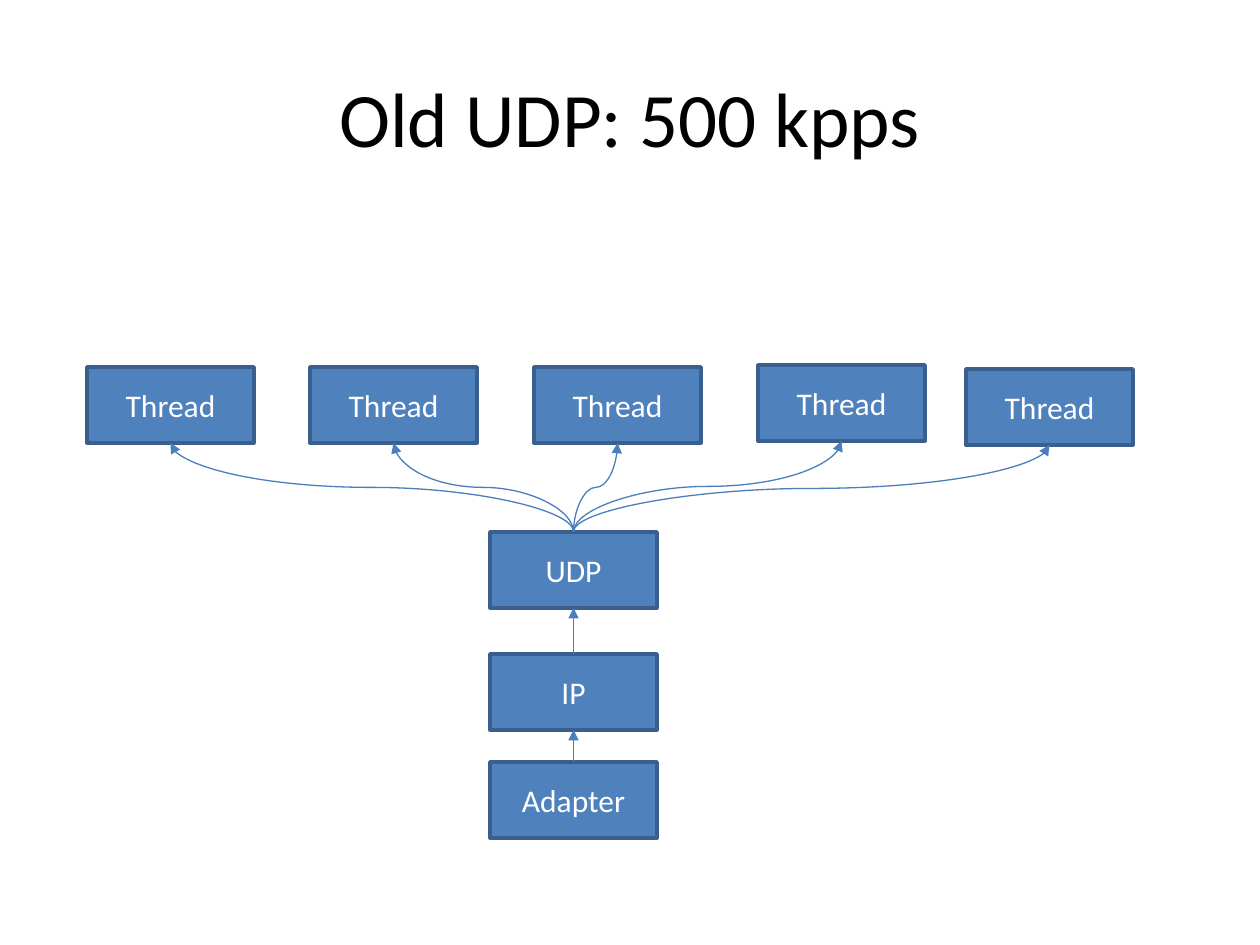
from lxml import etree
from pptx import Presentation
from pptx import util as u
from pptx.dml.color import RGBColor
from pptx.enum import shapes, text
from pptx.oxml.ns import qn

PX_PER_INCH = 126
FONT = "Calibri"
COLORS = {"title": "000000", "box": "4F81BD", "border": "3A5F8C",
          "label": "FFFFFF", "arrow": "4B7EBC"}
BOX_SIZE = (167, 76)
STACK_LEFT = 490
LAYERS = [("Adapter", 762), ("IP", 654), ("UDP", 532)]
THREADS = [(87, 367), (310, 367), (534, 367), (758, 365), (966, 369)]
TOP_SITE, BOTTOM_SITE = 0, 2


def px(count):
    """Turn whole px into EMU."""
    return u.Emu(round(count * u.Inches(1) / PX_PER_INCH))


def color(name):
    """Look up a palette colour."""
    return RGBColor.from_string(COLORS[name])


def write(frame, wording, size, tint):
    """Fill a text frame with one centred, formatted paragraph."""
    frame.text = wording
    frame.word_wrap = True
    frame.vertical_anchor = text.MSO_ANCHOR.MIDDLE
    line = frame.paragraphs[0]
    line.alignment = text.PP_ALIGN.CENTER
    font = line.runs[0].font
    font.name, font.size = FONT, u.Pt(size)
    font.color.rgb = color(tint)


def add_title(slide, wording):
    """Place and format the slide title."""
    title = slide.shapes.title
    title.left, title.top, title.width, title.height = map(px, (63, 38, 1134, 158))
    write(title.text_frame, wording, 44, "title")


def add_box(slide, label, left, top):
    """Add one labelled box of the diagram."""
    box = slide.shapes.add_shape(shapes.MSO_SHAPE.RECTANGLE,
                                 *map(px, (left, top, *BOX_SIZE)))
    box.shadow.inherit = False
    box.fill.solid()
    box.fill.fore_color.rgb = color("box")
    box.line.color.rgb = color("border")
    box.line.width = u.Pt(2)
    write(box.text_frame, label, 18, "label")
    return box


def add_arrow(slide, lower, upper, kind=shapes.MSO_CONNECTOR.STRAIGHT):
    """Connect the top of one box to the bottom of another with an arrow."""
    arrow = slide.shapes.add_connector(kind, 0, 0, 0, 0)
    arrow.begin_connect(lower, TOP_SITE)
    arrow.end_connect(upper, BOTTOM_SITE)
    arrow.line.color.rgb = color("arrow")
    arrow.line.width = u.Pt(0.75)
    etree.SubElement(arrow.line._get_or_add_ln(), qn("a:tailEnd"), type="triangle")
    etree.SubElement(arrow._element.spPr, qn("a:effectLst"))
    return arrow


def add_curve(slide, lower, upper):
    """Add an arrow that leaves and arrives vertically along an S curve."""
    curve = add_arrow(slide, lower, upper, shapes.MSO_CONNECTOR.CURVE)
    start_x, end_x = curve.begin_x, curve.end_x
    start_y, end_y = curve.begin_y, curve.end_y
    rise, run = start_y - end_y, abs(end_x - start_x)
    curve.left = (start_x + end_x - rise) // 2
    curve.top = (start_y + end_y - run) // 2
    curve.width, curve.height = rise, run
    rightward = end_x > start_x
    frame = curve._element.spPr.find(qn("a:xfrm"))
    frame.set("rot", str((90 if rightward else 270) * 60000))
    frame.set("flipH", "1" if rightward else "0")
    frame.set("flipV", "1")


def main():
    """Build the slide and save it."""
    deck = Presentation()
    deck.slide_width, deck.slide_height = px(1260), px(945)
    slide = deck.slides.add_slide(deck.slide_layouts[5])
    add_title(slide, "Old UDP: 500 kpps")
    adapter, ip, udp = [add_box(slide, label, STACK_LEFT, top)
                        for label, top in LAYERS]
    threads = [add_box(slide, "Thread", left, top) for left, top in THREADS]
    for thread in threads:
        add_curve(slide, udp, thread)
    add_arrow(slide, ip, udp)
    add_arrow(slide, adapter, ip)
    deck.save("out.pptx")


if __name__ == "__main__":
    main()
